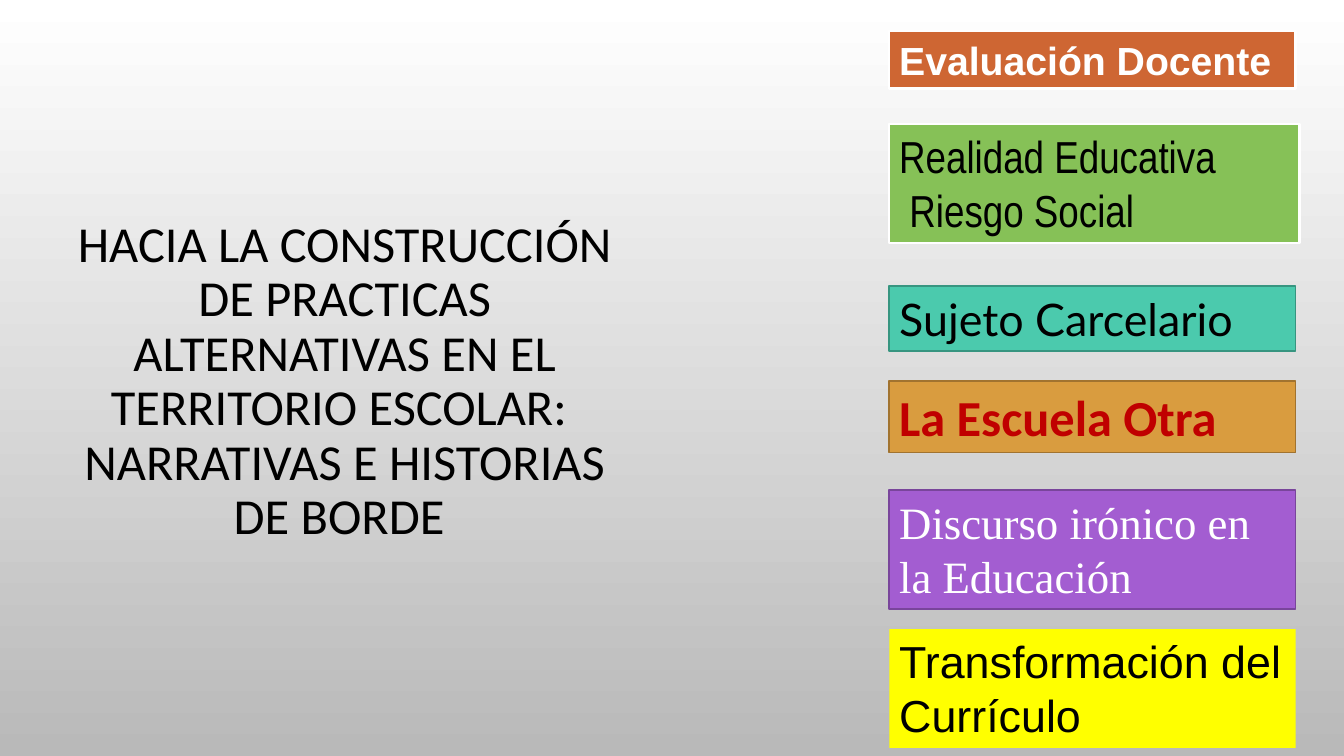
from pptx import Presentation
from pptx import util as u
from pptx.dml.color import RGBColor
from pptx.enum import shapes, text

PX = 9144  # EMU per px, 100 px to the inch

THEME = {
    "top": "FFFFFF", "bottom": "B9B9B9",
    "black": "000000", "white": "FFFFFF", "red": "C00000",
    "rust": "CE6633", "green": "86C157",
    "teal": "4BCAAD", "teal_edge": "379580",
    "ochre": "D99C3F", "ochre_edge": "A1732F",
    "violet": "A35DD1", "violet_edge": "79459B",
    "yellow": "FFFF00",
    "large": 36, "medium": 32, "small": 28,
    "thick": 1.75, "thin": 1.25,
}


def color(name):
    return RGBColor.from_string(THEME[name])


def write(frame, lines, size, font, ink, bold=False, **layout):
    for index, line in enumerate(lines):
        para = frame.paragraphs[0] if index == 0 else frame.add_paragraph()
        for key, value in layout.items():
            setattr(para, key, value)
        span = para.add_run()
        span.text = line
        look = {"name": font, "size": u.Pt(THEME[size]), "bold": bold}
        for key, value in look.items():
            setattr(span.font, key, value)
        span.font.color.rgb = color(ink)


deck = Presentation()
deck.slide_width, deck.slide_height = 1333 * PX, 750 * PX
page = deck.slides.add_slide(deck.slide_layouts[6])

# Background: white at the top to grey at the bottom
backdrop = page.background.fill
backdrop.gradient()
backdrop.gradient_angle = 270
for stop, name in zip(backdrop.gradient_stops, ("top", "bottom")):
    stop.color.rgb = color(name)

# Title
title = page.shapes.add_textbox(44 * PX, 211 * PX, 596 * PX, 335 * PX).text_frame
title.word_wrap = True
title.vertical_anchor = text.MSO_ANCHOR.BOTTOM
write(title,
      ["HACIA LA CONSTRUCCIÓN DE PRACTICAS ALTERNATIVAS EN EL TERRITORIO "
       "ESCOLAR:  NARRATIVAS E HISTORIAS DE BORDE "],
      "large", "Calibri", "black",
      alignment=text.PP_ALIGN.CENTER, line_spacing=0.9)

# Topic column: top, width, height, fill, edge, edge weight, lines, size, font, ink, bold
TOPICS = [
    (31, 403, 57, "rust", "white", "thick",
     ["Evaluación Docente"], "small", "Arial", "white", True),
    (123, 407, 118, "green", "white", "thick",
     ["Realidad Educativa", " Riesgo Social"], "medium", "Arial Narrow", "black", False),
    (284, 403, 64, "teal", "teal_edge", "thin",
     ["Sujeto Carcelario"], "medium", "Lato", "black", False),
    (378, 403, 71, "ochre", "ochre_edge", "thin",
     ["La Escuela Otra"], "large", "Calibri", "red", True),
    (486, 403, 118, "violet", "violet_edge", "thin",
     ["Discurso irónico en la Educación"], "medium", "Times New Roman", "white", False),
    (624, 403, 118, "yellow", None, None,
     ["Transformación del Currículo"], "medium", "Arial", "black", False),
]
for top, width, height, fill, edge, weight, lines, size, font, ink, bold in TOPICS:
    box = page.shapes.add_shape(shapes.MSO_SHAPE.RECTANGLE,
                                882 * PX, top * PX, width * PX, height * PX)
    box.shadow.inherit = False
    box.fill.solid()
    box.fill.fore_color.rgb = color(fill)
    if edge:
        box.line.color.rgb = color(edge)
        box.line.width = u.Pt(THEME[weight])
    else:
        box.line.fill.background()
    frame = box.text_frame
    settings = {"word_wrap": True, "vertical_anchor": text.MSO_ANCHOR.TOP,
                "auto_size": text.MSO_AUTO_SIZE.SHAPE_TO_FIT_TEXT}
    for key, value in settings.items():
        setattr(frame, key, value)
    write(frame, lines, size, font, ink, bold, alignment=text.PP_ALIGN.LEFT)

deck.save("out.pptx")
